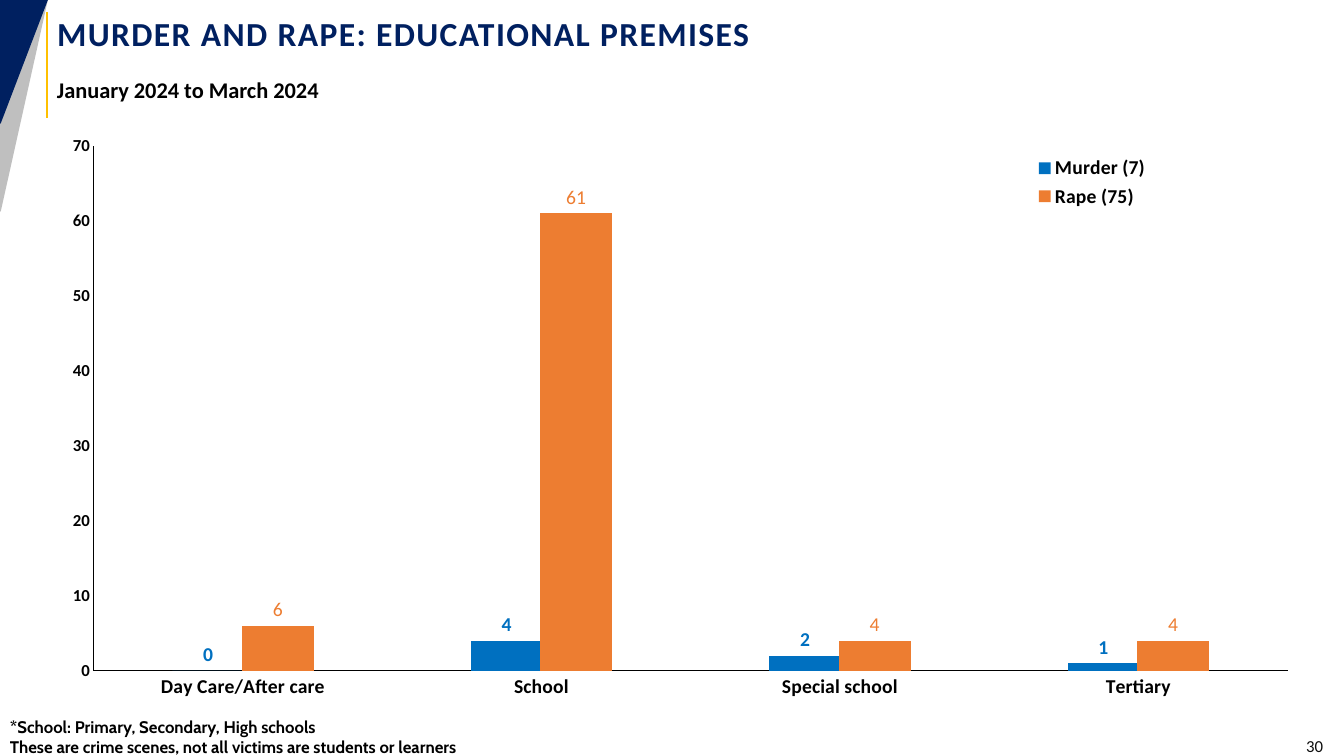
import pptx
import pptx.chart.data
import pptx.dml.color
import pptx.enum.chart
import pptx.enum.shapes
import pptx.enum.text
import pptx.oxml
import pptx.oxml.ns
import pptx.util

PX = 914400 / 100.8
COLORS = {"navy": "002060", "grey": "BFBFBF", "gold": "FFC000", "black": "000000",
          "number": "0D0D0D", "murder": "0070C0", "rape": "ED7D31"}


def box(*lengths):
    return [pptx.util.Emu(round(length * PX)) for length in lengths]


def style(font, size, color, bold=True, name="Calibri"):
    font.size = pptx.util.Pt(size)
    font.bold = bold
    font.name = name
    font.color.rgb = pptx.dml.color.RGBColor.from_string(COLORS[color])


presentation = pptx.Presentation()
presentation.slide_width, presentation.slide_height = box(1344, 756)
slide = presentation.slides.add_slide(presentation.slide_layouts[5])

for color, height in (("grey", 211), ("navy", 123)):
    triangle = slide.shapes.add_shape(
        pptx.enum.shapes.MSO_SHAPE.RIGHT_TRIANGLE, *box(0, 0, 47, height))
    triangle.shadow.inherit = False
    triangle.fill.solid()
    triangle.fill.fore_color.rgb = pptx.dml.color.RGBColor.from_string(COLORS[color])
    triangle.line.color.rgb = pptx.dml.color.RGBColor.from_string(COLORS[color])
    triangle.line.width = pptx.util.Pt(1.25)
    triangle._element.spPr.find(pptx.oxml.ns.qn("a:xfrm")).set("flipV", "1")

rule = slide.shapes.add_connector(
    pptx.enum.shapes.MSO_CONNECTOR.STRAIGHT, *box(47, 118, 47, 12))
rule.line.color.rgb = pptx.dml.color.RGBColor.from_string(COLORS["gold"])
rule.line.width = pptx.util.Pt(1.25)
rule._element.spPr.append(pptx.oxml.parse_xml(
    f'<a:effectLst {pptx.oxml.ns.nsdecls("a")}/>'))

title = slide.shapes.title
title.left, title.top, title.width, title.height = box(47, 12, 1206, 49)
title.text_frame.text = "MURDER AND RAPE: EDUCATIONAL PREMISES"
title.text_frame.vertical_anchor = pptx.enum.text.MSO_ANCHOR.MIDDLE
paragraph = title.text_frame.paragraphs[0]
paragraph.alignment = pptx.enum.text.PP_ALIGN.LEFT
paragraph.line_spacing = 0.8
style(paragraph.runs[0].font, 24, "navy")
paragraph.runs[0].font._element.set("spc", "100")

texts = (
    ("period", "January 2024 to March 2024", (47, 69, 1206, 48), 16, "black", True, "Calibri"),
    ("note", "*School: Primary, Secondary, High schools\n"
             "These are crime scenes, not all victims are students or learners",
     (0, 712, 1344, 50), 12, "black", True, "Cabin"),
    ("number", "30", (1194, 733, 139, 26), 12, "number", False, "Calibri"),
)
for role, text, place, size, color, bold, font_name in texts:
    shape = slide.shapes.add_textbox(*box(*place))
    shape.text_frame.word_wrap = True
    shape.text_frame.text = text
    for paragraph in shape.text_frame.paragraphs:
        style(paragraph.runs[0].font, size, color, bold, font_name)
        if role == "period":
            paragraph.line_spacing = 1.08
            paragraph.space_before = pptx.util.Pt(6)
            paragraph.space_after = pptx.util.Pt(2)
        if role == "number":
            paragraph.alignment = pptx.enum.text.PP_ALIGN.RIGHT
            shape.text_frame.vertical_anchor = pptx.enum.text.MSO_ANCHOR.MIDDLE

crimes = (("Murder (7)", (0, 4, 2, 1), "murder", True),
          ("Rape (75)", (6, 61, 4, 4), "rape", False))
chart_data = pptx.chart.data.CategoryChartData()
chart_data.categories = ["Day Care/After care", "School", "Special school", "Tertiary"]
for name, values, color, bold in crimes:
    chart_data.add_series(name, values)
chart = slide.shapes.add_chart(
    pptx.enum.chart.XL_CHART_TYPE.COLUMN_CLUSTERED, *box(47, 124, 1266, 588), chart_data).chart
chart.has_title = False
style(chart.font, 10, "black", False, "Cabin")

plot = chart.plots[0]
plot.gap_width = 219
plot.overlap = 3
plot.vary_by_categories = False
for series, (name, values, color, bold) in zip(plot.series, crimes):
    series.format.fill.solid()
    series.format.fill.fore_color.rgb = pptx.dml.color.RGBColor.from_string(COLORS[color])
    labels = series.data_labels
    labels.show_value = True
    labels.position = pptx.enum.chart.XL_LABEL_POSITION.OUTSIDE_END
    style(labels.font, 14, color, bold)

for axis, size in ((chart.category_axis, 14), (chart.value_axis, 12)):
    axis.has_major_gridlines = False
    axis.major_tick_mark = pptx.enum.chart.XL_TICK_MARK.NONE
    axis.minor_tick_mark = pptx.enum.chart.XL_TICK_MARK.NONE
    axis.format.line.color.rgb = pptx.dml.color.RGBColor.from_string(COLORS["black"])
    axis.format.line.width = pptx.util.Pt(0.75)
    style(axis.tick_labels.font, size, "black")
chart.value_axis.minimum_scale = 0
chart.value_axis.maximum_scale = 70
chart.value_axis.major_unit = 10

chart.has_legend = True
legend = chart.legend
legend.position = pptx.enum.chart.XL_LEGEND_POSITION.TOP
legend.include_in_layout = False
style(legend.font, 14, "black")

plot_area = chart._chartSpace.chart.plotArea
for old_layout in plot_area.findall(pptx.oxml.ns.qn("c:layout")):
    plot_area.remove(old_layout)
for old_layout in legend._element.findall(pptx.oxml.ns.qn("c:layout")):
    legend._element.remove(old_layout)
layouts = ((plot_area, 0, '<c:layoutTarget val="inner"/>', (47, 22, 1194, 525)),
           (legend._element, 1, "", (983, 28, 125, 60)))
for parent, index, target, (left, top, width, height) in layouts:
    parent.insert(index, pptx.oxml.parse_xml(
        f'<c:layout {pptx.oxml.ns.nsdecls("c")}><c:manualLayout>{target}'
        '<c:xMode val="edge"/><c:yMode val="edge"/>'
        f'<c:x val="{left / 1266:.3f}"/><c:y val="{top / 588:.3f}"/>'
        f'<c:w val="{width / 1266:.3f}"/><c:h val="{height / 588:.3f}"/>'
        '</c:manualLayout></c:layout>'))

presentation.save("out.pptx")
